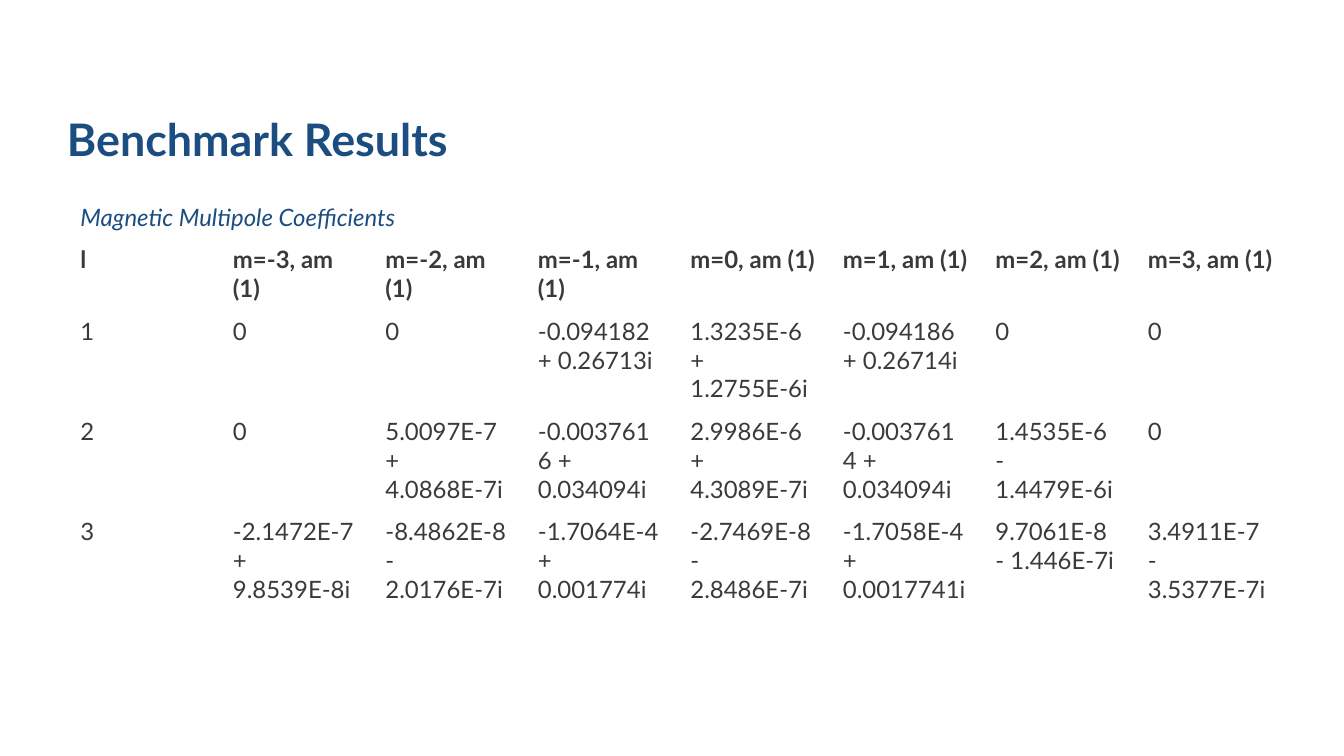
from dataclasses import dataclass

from pptx import Presentation
from pptx.dml.color import RGBColor
from pptx.enum.text import MSO_ANCHOR, PP_ALIGN
from pptx.util import Pt

LEFT = PP_ALIGN.LEFT
MIDDLE = MSO_ANCHOR.MIDDLE
TITLE_ONLY = 5
EMU_PER_PX = 914400 / 134.4


@dataclass(frozen=True)
class Theme:
    font: str = "Lato"
    accent: RGBColor = RGBColor(0x1B, 0x4D, 0x81)
    text: RGBColor = RGBColor(0x39, 0x3A, 0x39)
    title_size: float = 24
    table_size: float = 12.8


THEME = Theme()
CAPTION = "Magnetic Multipole Coefficients"
HEADER = ["l"] + [f"m={m}, am (1)" for m in range(-3, 4)]
ROWS = [
    ["1", "0", "0", "-0.094182 + 0.26713i", "1.3235E-6 + 1.2755E-6i",
     "-0.094186 + 0.26714i", "0", "0"],
    ["2", "0", "5.0097E-7 + 4.0868E-7i", "-0.0037616 + 0.034094i",
     "2.9986E-6 + 4.3089E-7i", "-0.0037614 + 0.034094i",
     "1.4535E-6 - 1.4479E-6i", "0"],
    ["3", "-2.1472E-7 + 9.8539E-8i", "-8.4862E-8 - 2.0176E-7i",
     "-1.7064E-4 + 0.001774i", "-2.7469E-8 - 2.8486E-7i",
     "-1.7058E-4 + 0.0017741i", "9.7061E-8 - 1.446E-7i",
     "3.4911E-7 - 3.5377E-7i"],
]


def px(n):
    return round(n * EMU_PER_PX)


def write(tf, text, size=THEME.table_size, color=THEME.text, bold=False,
          italic=False, spacing=None):
    p = tf.paragraphs[0]
    p.alignment = LEFT
    p.line_spacing = spacing
    r = p.add_run()
    r.text = text
    r.font.name = THEME.font
    r.font.size = Pt(size)
    r.font.color.rgb = color
    r.font.bold = bold
    r.font.italic = italic


def add_title(s, text, x, y, w, h):
    sp = s.shapes.title
    sp.left, sp.top, sp.width, sp.height = px(x), px(y), px(w), px(h)
    tf = sp.text_frame
    tf.margin_left = 0
    tf.vertical_anchor = MIDDLE
    write(tf, text, size=THEME.title_size, color=THEME.accent, bold=True,
          spacing=0.9)


def add_results(s, caption, header, rows, x, y, w, row_h):
    grid = [[caption] + [""] * (len(header) - 1), header] + rows
    table = s.shapes.add_table(len(grid), len(header), px(x), px(y), px(w),
                               px(row_h * len(grid))).table
    table.first_row = False
    table.horz_banding = False
    for cell in table.iter_cells():
        cell.fill.background()
    table.cell(0, 0).merge(table.cell(0, len(header) - 1))
    write(table.cell(0, 0).text_frame, caption, color=THEME.accent, italic=True)
    for i, values in enumerate(grid[1:], 1):
        for j, value in enumerate(values):
            write(table.cell(i, j).text_frame, value, bold=i == 1)


def main():
    prs = Presentation()
    prs.slide_width, prs.slide_height = px(1344), px(756)
    s = prs.slides.add_slide(prs.slide_layouts[TITLE_ONLY])
    add_title(s, "Benchmark Results", 67, 87, 1220, 109)
    add_results(s, CAPTION, HEADER, ROWS, 67, 196, 1220, 38)
    prs.save("out.pptx")


if __name__ == "__main__":
    main()
